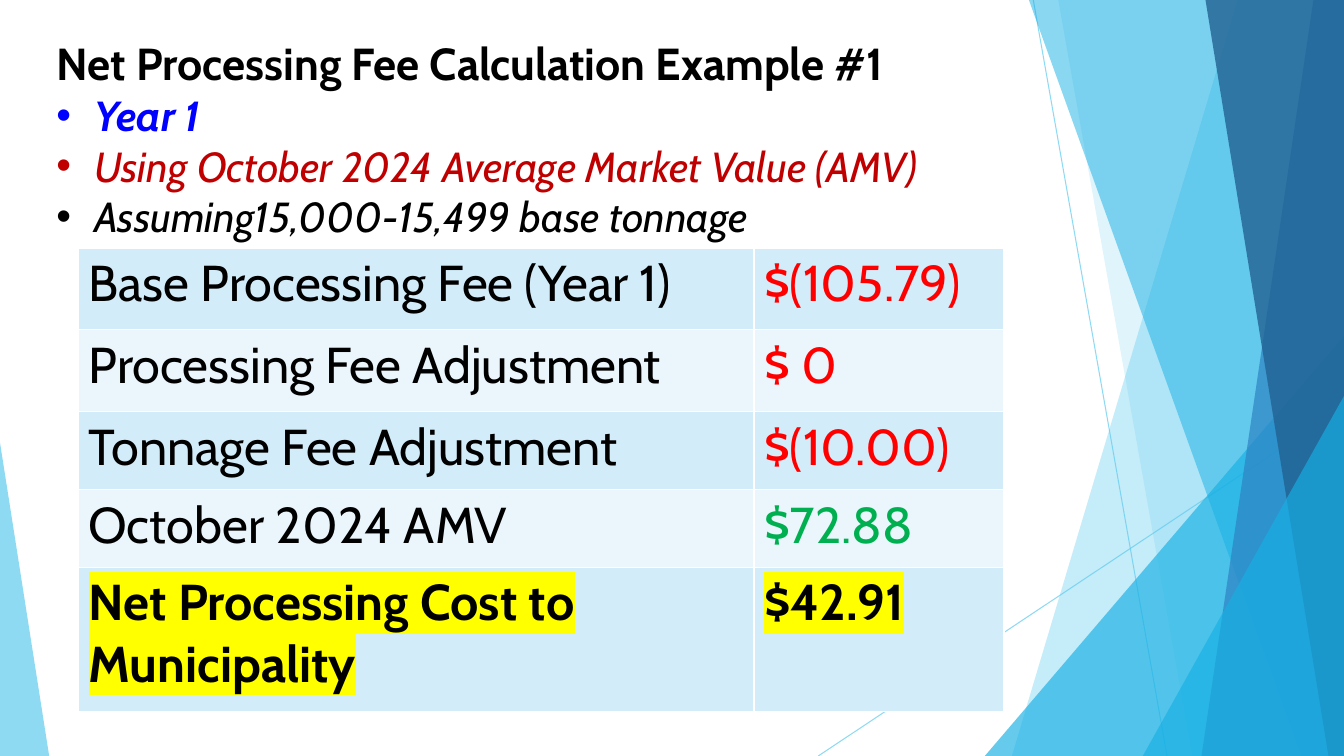
from lxml.etree import SubElement
from pptx import Presentation
from pptx.dml.color import RGBColor
from pptx.enum.shapes import MSO_CONNECTOR, MSO_SHAPE
from pptx.enum.text import MSO_ANCHOR, MSO_AUTO_SIZE, PP_ALIGN
from pptx.oxml.ns import qn
from pptx.util import Cm, Pt

COLOURS = {
    "black": "000000", "white": "FFFFFF", "blue": "0000FF", "crimson": "C00000",
    "red": "FF0000", "green": "00B050", "yellow": "FFFF00",
    "sky": "5FCBEF", "cyan": "17B0E4", "steel": "2E83C3", "navy": "226292",
    "band_dark": "D2ECF9", "band_light": "EAF6FC",
}
WIDTH, HEIGHT = 33.87, 19.05


def paint(fill, colour, opacity):
    """Give a fill a solid colour with an opacity in percent."""
    fill.solid()
    fill.fore_color.rgb = RGBColor.from_string(COLOURS[colour])
    for colour_element in fill._xPr.iter(qn("a:srgbClr")):
        SubElement(colour_element, qn("a:alpha"), val=str(opacity * 1000))


def style(paragraph, size, colour, bold=False, italic=False):
    for run in paragraph.runs:
        font = run.font
        font.name, font.size = "Cabin", Pt(size)
        font.bold, font.italic = bold, italic
        font.color.rgb = RGBColor.from_string(COLOURS[colour])


deck = Presentation()
deck.slide_width, deck.slide_height = Cm(WIDTH), Cm(HEIGHT)
slide = deck.slides.add_slide(deck.slide_layouts[5])
shapes = slide.shapes

# Thin lines behind the facets
for x1, y1, x2, y2 in [(26.04, 0, 29.41, HEIGHT), (WIDTH, 10.24, 20.62, HEIGHT)]:
    ray = shapes.add_connector(MSO_CONNECTOR.STRAIGHT, Cm(x1), Cm(y1), Cm(x2), Cm(y2))
    ray.line.width = Pt(0.75)
    paint(ray.line.fill, "sky", 70)
    SubElement(ray._element.spPr, qn("a:effectLst"))

# Bands: top x, bottom x (they run to the right edge of the slide)
# Triangles: left, top, right, apex (they stand on the bottom edge)
facets = [
    ((31.19, 25.5), "sky", 36),
    ((26.67, 30.05), "sky", 20),
    ((24.82, 8.46, WIDTH, 1), "cyan", 66),
    ((25.93, 32.79), "cyan", 50),
    ((33.1, 30.28), "steel", 70),
    ((30.38, 33.48), "navy", 80),
    ((28.8, 9.98, WIDTH, 1), "cyan", 66),
    ((0, 11.15, 1.24, 0), "sky", 70),
]
for outline, colour, opacity in facets:
    if len(outline) == 2:
        top_x, bottom_x = outline
        builder = shapes.build_freeform(Cm(top_x), 0)
        builder.add_line_segments([(Cm(WIDTH), 0), (Cm(WIDTH), Cm(HEIGHT)),
                                   (Cm(bottom_x), Cm(HEIGHT))])
        facet = builder.convert_to_shape()
    else:
        left, top, right, apex = outline
        facet = shapes.add_shape(MSO_SHAPE.ISOSCELES_TRIANGLE, Cm(left), Cm(top),
                                 Cm(right - left), Cm(HEIGHT - top))
        facet.adjustments[0] = apex
    paint(facet.fill, colour, opacity)
    facet.line.fill.background()
    facet.shadow.inherit = False

# Heading and assumptions
heading = shapes.title
heading.left, heading.top, heading.width, heading.height = Cm(1.17), Cm(0.76), Cm(32.69), Cm(1.5)
heading.text_frame.text = "Net Processing Fee Calculation Example #1"
style(heading.text_frame.paragraphs[0], 32, "black", bold=True)

assumptions = shapes.add_textbox(Cm(1.17), Cm(2.26), Cm(32.69), Cm(3.96))
assumptions.text_frame.margin_top = 0
heading.text_frame.margin_bottom = 0
for frame in (heading.text_frame, assumptions.text_frame):
    frame.word_wrap = True
    frame.auto_size = MSO_AUTO_SIZE.NONE
    frame.vertical_anchor = MSO_ANCHOR.TOP
    frame.paragraphs[0].alignment = PP_ALIGN.LEFT

bullets = [
    ("Year 1", "blue", True),
    ("Using October 2024 Average Market Value (AMV)", "crimson", False),
    ("Assuming15,000-15,499 base tonnage", "black", False),
]
assumptions.text_frame.text = "\n".join(text for text, _, _ in bullets)
for paragraph, (_, colour, bold) in zip(assumptions.text_frame.paragraphs, bullets):
    style(paragraph, 30, colour, bold, italic=True)
    properties = paragraph._p.get_or_add_pPr()
    properties.set("marL", str(Cm(0.95)))
    properties.set("indent", str(-Cm(0.95)))
    SubElement(properties, qn("a:buFont"), typeface="Arial")
    SubElement(properties, qn("a:buChar"), char="•")

# Fee table
fees = [
    ("Base Processing Fee (Year 1)", "$(105.79)", "red", 2.06),
    ("Processing Fee Adjustment", "$ 0", "red", 2.06),
    ("Tonnage Fee Adjustment", "$(10.00)", "red", 1.96),
    ("October 2024 AMV", "$72.88", "green", 1.96),
    ("Net Processing Cost to Municipality", "$42.91", "black", 3.63),
]
fee_table = shapes.add_table(len(fees), 2, Cm(1.98), Cm(6.25), Cm(23.32), Cm(11.67)).table
fee_table.first_row = fee_table.horz_banding = False
fee_table.columns[0].width, fee_table.columns[1].width = Cm(17.02), Cm(6.3)

for row, (label, amount, amount_colour, row_height) in enumerate(fees):
    fee_table.rows[row].height = Cm(row_height)
    is_net = row == len(fees) - 1
    for column, (text, colour) in enumerate([(label, "black"), (amount, amount_colour)]):
        cell = fee_table.cell(row, column)
        cell.text_frame.text = text
        paragraph = cell.text_frame.paragraphs[0]
        style(paragraph, 36, colour, bold=is_net)
        if is_net:
            run_properties = paragraph.runs[0].font._element
            highlight = SubElement(run_properties, qn("a:highlight"))
            SubElement(highlight, qn("a:srgbClr"), val=COLOURS["yellow"])
            run_properties.find(qn("a:solidFill")).addnext(highlight)
        cell_properties = cell._tc.get_or_add_tcPr()
        for side in ("lnL", "lnR", "lnT", "lnB"):
            border = SubElement(cell_properties, qn(f"a:{side}"), w=str(Pt(1)))
            border_fill = SubElement(border, qn("a:solidFill"))
            SubElement(border_fill, qn("a:srgbClr"), val=COLOURS["white"])
        cell.fill.solid()
        cell.fill.fore_color.rgb = RGBColor.from_string(
            COLOURS["band_light" if row % 2 else "band_dark"])

deck.save("out.pptx")
